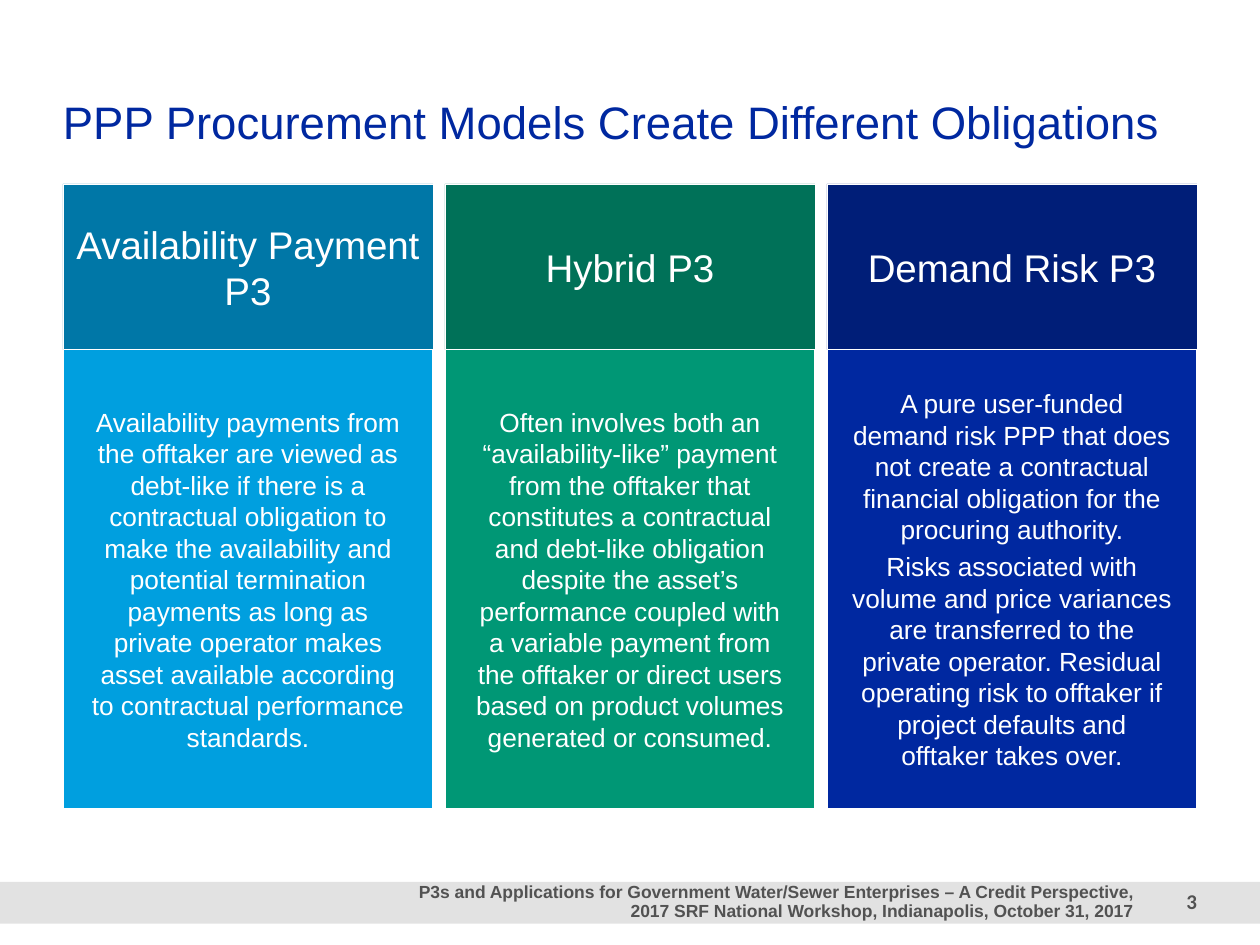
from pptx import Presentation
from pptx.dml.color import RGBColor
from pptx.enum.shapes import MSO_SHAPE
from pptx.enum.text import MSO_ANCHOR, PP_ALIGN
from pptx.util import Cm, Pt

RECTANGLE = MSO_SHAPE.RECTANGLE
MIDDLE, BOTTOM = MSO_ANCHOR.MIDDLE, MSO_ANCHOR.BOTTOM
LEFT, CENTER, RIGHT = PP_ALIGN.LEFT, PP_ALIGN.CENTER, PP_ALIGN.RIGHT

SLIDE_WIDTH, SLIDE_HEIGHT = 25.4, 19.05
MARGIN = 1.27
CONTENT_WIDTH = SLIDE_WIDTH - 2 * MARGIN
WHITE, GREY, BLUE = "FFFFFF", "525252", "0028A0"

MODELS = [
    ("Availability Payment P3", "0077A7", "009FDF", [
        "Availability payments from the offtaker are viewed as debt-like if there is a "
        "contractual obligation to make the availability and potential termination "
        "payments as long as private operator makes asset available according to "
        "contractual performance standards."]),
    ("Hybrid P3", "007158", "009775", [
        "Often involves both an “availability-like” payment from the offtaker that "
        "constitutes a contractual and debt-like obligation despite the asset’s "
        "performance coupled with a variable payment from the offtaker or direct users "
        "based on product volumes generated or consumed."]),
    ("Demand Risk P3", "001E78", BLUE, [
        "A pure user-funded demand risk PPP that does not create a contractual "
        "financial obligation for the procuring authority.",
        "Risks associated with volume and price variances are transferred to the "
        "private operator. Residual operating risk to offtaker if project defaults and "
        "offtaker takes over."]),
]


def color(hex_string):
    return RGBColor.from_string(hex_string)


def write(shape, paragraphs, size, font_color, align, anchor=MIDDLE, inset=0,
          font_name="Arial", bold=False, line_spacing=None, space_before=0):
    text_frame = shape.text_frame
    text_frame.text = "\n".join(paragraphs)
    text_frame.word_wrap = True
    text_frame.vertical_anchor = anchor
    text_frame.margin_left = text_frame.margin_right = Cm(inset)
    text_frame.margin_top = text_frame.margin_bottom = Cm(inset)
    for index, paragraph in enumerate(text_frame.paragraphs):
        paragraph.alignment = align
        paragraph.line_spacing = line_spacing
        paragraph.space_before = Pt(space_before if index else 0)
        for run in paragraph.runs:
            run.font.name = font_name
            run.font.size = Pt(size)
            run.font.bold = bold
            run.font.color.rgb = color(font_color)


def add_rectangle(slide, left, top, width, height, fill, line_width=0):
    shape = slide.shapes.add_shape(RECTANGLE, Cm(left), Cm(top), Cm(width), Cm(height))
    shape.shadow.inherit = False
    shape.fill.solid()
    shape.fill.fore_color.rgb = color(fill)
    if line_width:
        shape.line.color.rgb = color(WHITE)
        shape.line.width = Pt(line_width)
    else:
        shape.line.fill.background()
    return shape


def add_text_box(slide, left, top, width, height):
    return slide.shapes.add_textbox(Cm(left), Cm(top), Cm(width), Cm(height))


def add_title(slide, left, top, width, height):
    title = add_text_box(slide, left, top, width, height)
    write(title, ["PPP Procurement Models Create Different Obligations"],
          26, BLUE, LEFT, BOTTOM)


def add_model(slide, left, top, width, height, model):
    heading, heading_fill, body_fill, paragraphs = model
    heading_height = 3.34
    body = add_rectangle(slide, left, top + heading_height, width,
                         height - heading_height, body_fill, 0.75)
    write(body, paragraphs, 15, WHITE, CENTER, inset=0.5, space_before=3)
    header = add_rectangle(slide, left, top, width, heading_height, heading_fill, 0.25)
    write(header, [heading], 22, WHITE, CENTER, inset=0.25)


def add_models(slide, left, top, width, height):
    gap = 0.24
    column_width = (width - gap * (len(MODELS) - 1)) / len(MODELS)
    for index, model in enumerate(MODELS):
        column_left = left + index * (column_width + gap)
        add_model(slide, column_left, top, column_width, height, model)


def add_footer(slide, left, top, width, height):
    add_rectangle(slide, left, top, width, height, "E2E2E2")
    right = left + width
    source = add_text_box(slide, right - 17.65, top + 0.05, 15.09, height - 0.1)
    write(source, ["P3s and Applications for Government Water/Sewer Enterprises – "
                   "A Credit Perspective, 2017 SRF National Workshop, Indianapolis, "
                   "October 31, 2017"],
          10, GREY, RIGHT, bold=True, line_spacing=0.9)
    number_width = 0.36
    number = add_text_box(slide, right - MARGIN - number_width, top + 0.18,
                          number_width, 0.48)
    write(number, ["3"], 12, GREY, RIGHT, font_name="Calibri", bold=True,
          line_spacing=0.9)


def main():
    presentation = Presentation()
    presentation.slide_width = Cm(SLIDE_WIDTH)
    presentation.slide_height = Cm(SLIDE_HEIGHT)
    slide = presentation.slides.add_slide(presentation.slide_layouts[6])
    add_footer(slide, 0, 17.78, SLIDE_WIDTH, 0.84)
    add_title(slide, MARGIN, 1.88, CONTENT_WIDTH, 1.12)
    add_models(slide, MARGIN, 3.71, CONTENT_WIDTH, 12.6)
    presentation.save("out.pptx")


if __name__ == "__main__":
    main()
